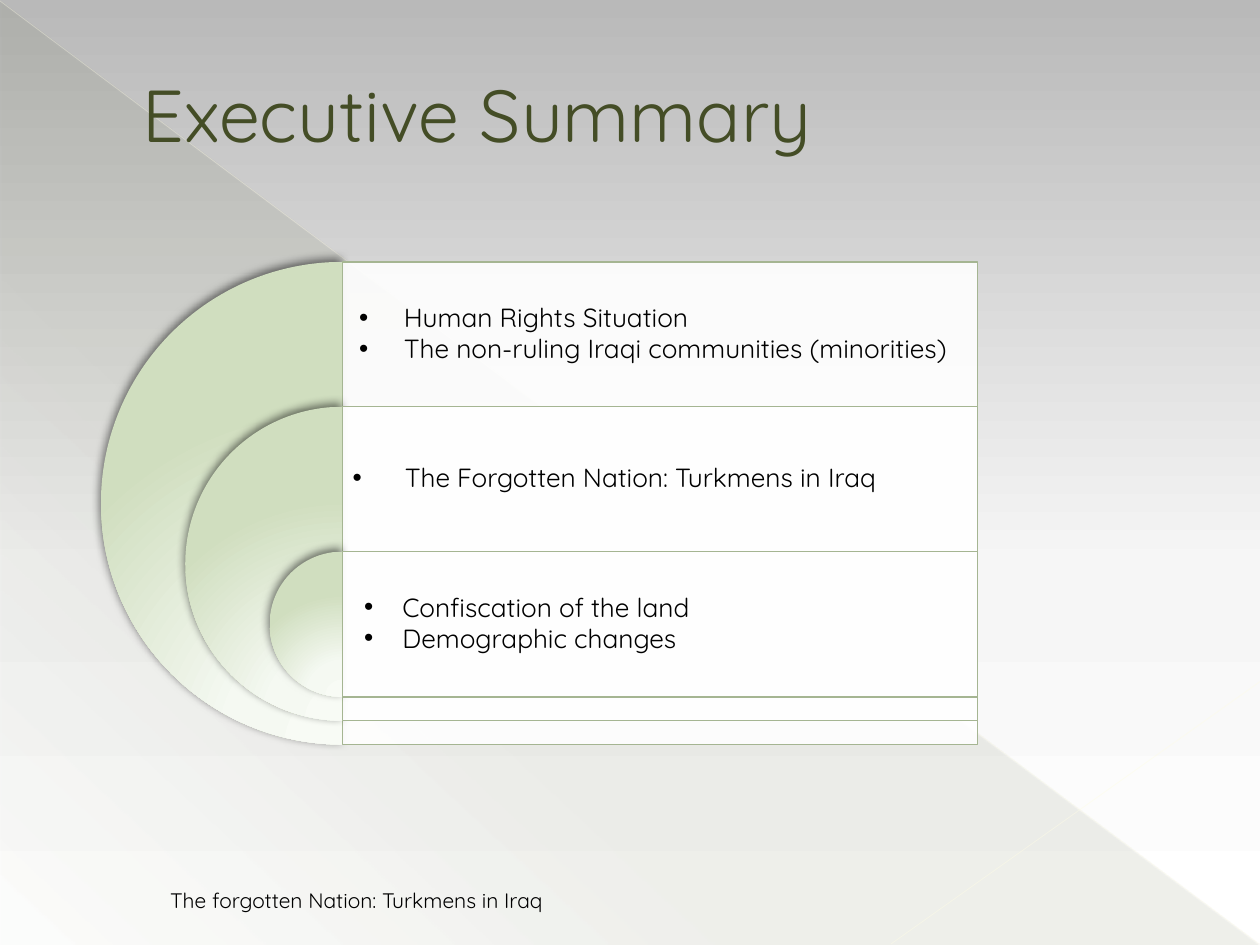
from dataclasses import dataclass

from lxml.etree import SubElement
from pptx import Presentation
from pptx.dml.color import RGBColor as Rgb
from pptx.enum.shapes import MSO_CONNECTOR as Connector, MSO_SHAPE as Preset
from pptx.enum.text import MSO_ANCHOR as Anchor, MSO_AUTO_SIZE as AutoSize, PP_ALIGN as Align
from pptx.oxml import parse_xml
from pptx.oxml.ns import nsdecls, qn
from pptx.util import Cm, Pt


@dataclass(frozen=True)
class Theme:
    font: str = "Quicksand"
    olive: str = "444D26"
    green: str = "A5B592"
    white: str = "FFFFFF"
    black: str = "000000"
    upper_line: str = "FFFDE3"
    lower_line: str = "FFFDE6"
    backdrop: tuple = ((0, "B9B9B9", 100), (60, "F6F6F6", 100), (100, "FFFFFF", 100))
    wedge: tuple = ((0, "444D26", 10), (70, "444D26", 8), (100, "444D26", 1))
    glow: tuple = ((0, "F8FBF5", 100), (34, "F5F9F2", 100), (100, "D0DEBF", 100))
    title_size: int = 42
    list_size: int = 15
    footer_size: int = 12


theme = Theme()


def apply_gradient(parent, stops, direction):
    marks = "".join(
        f'<a:gs pos="{pos * 1000}"><a:srgbClr val="{color}">'
        f'<a:alpha val="{alpha * 1000}"/></a:srgbClr></a:gs>'
        for pos, color, alpha in stops
    )
    gradient = parse_xml(
        f'<a:gradFill {nsdecls("a")} rotWithShape="1"><a:gsLst>{marks}</a:gsLst>{direction}</a:gradFill>'
    )
    parent.replace(parent.find(qn("a:solidFill")), gradient)


def set_opacity(parent, percent):
    color = next(parent.iter(qn("a:srgbClr")))
    SubElement(color, qn("a:alpha"), val=str(percent * 1000))


deck = Presentation()
deck.slide_width, deck.slide_height = Cm(25.4), Cm(19.05)
slide = deck.slides.add_slide(deck.slide_layouts.get_by_name("Comparison"))
shapes = slide.shapes
layers = shapes.element

slide.background.fill.solid()
apply_gradient(
    slide.element.find(".//" + qn("p:bgPr")), theme.backdrop, '<a:lin ang="5400000" scaled="0"/>'
)

wedge = shapes.add_shape(Preset.RIGHT_TRIANGLE, Cm(0.02), Cm(0.04), Cm(25.36), Cm(19))
wedge.shadow.inherit = False
wedge.fill.solid()
wedge.line.fill.background()
apply_gradient(wedge.element.spPr, theme.wedge, '<a:lin ang="7980000" scaled="0"/>')

diagonals = (
    ((0, 0.02, 25.38, 19.03), theme.upper_line, 0.39, 35),
    ((25.4, 13.74, 17.96, 19.03), theme.lower_line, 0.47, 45),
)
for ends, color, weight, opacity in diagonals:
    diagonal = shapes.add_connector(Connector.STRAIGHT, *(Cm(end) for end in ends))
    diagonal.line.color.rgb = Rgb.from_string(color)
    diagonal.line.width = Pt(weight)
    set_opacity(diagonal.element.spPr, opacity)
    SubElement(diagonal.element.spPr, qn("a:effectLst"))

axis, stack_top, row_height = 6.9, 5.28, 2.92
panel_width = 12.8
outer_diameter, diameter_step = 9.73, 3.4
for level in range(3):
    diameter = outer_diameter - level * diameter_step
    top = Cm(stack_top + level * row_height)

    arc = shapes.add_shape(Preset.PIE, Cm(axis - diameter / 2), top, Cm(diameter), Cm(diameter))
    arc.adjustments[0], arc.adjustments[1] = 54, 162
    arc.fill.solid()
    arc.line.fill.background()
    apply_gradient(
        arc.element.spPr,
        theme.glow,
        '<a:path path="circle"><a:fillToRect l="50000" t="155000" r="50000" b="-55000"/></a:path>',
    )
    arc.shadow.inherit = False
    shade = SubElement(
        arc.element.spPr.find(qn("a:effectLst")), qn("a:outerShdw"),
        blurRad=str(Pt(5)), dist=str(Pt(2)), dir=str(245 * 60000), rotWithShape="0",
    )
    SubElement(shade, qn("a:srgbClr"), val=theme.black)
    set_opacity(shade, 50)

    panel = shapes.add_shape(Preset.RECTANGLE, Cm(axis), top, Cm(panel_width), Cm(diameter))
    panel.shadow.inherit = False
    panel.fill.solid()
    panel.fill.fore_color.rgb = Rgb.from_string(theme.white)
    set_opacity(panel.element.spPr, 90)
    panel.line.color.rgb = Rgb.from_string(theme.green)
    panel.line.width = Pt(0.75)

topics = (
    (7.09, 0.9, ("Human Rights Situation", "The non-ruling Iraqi communities (minorities)")),
    (6.96, 1.05, ("The Forgotten Nation: Turkmens in Iraq",)),
    (7.19, 0.77, ("Confiscation of the land", "Demographic changes")),
)
topic_holders = list(slide.placeholders)[1:]
for row, (left, indent, points) in enumerate(topics):
    topic = topic_holders[row]
    topic.left, topic.top = Cm(left), Cm(stack_top + row * row_height)
    topic.width, topic.height = Cm(axis + panel_width - left), Cm(row_height)
    frame = topic.text_frame
    frame.text = "\n".join(points)
    frame.word_wrap = True
    frame.auto_size = AutoSize.NONE
    frame.vertical_anchor = Anchor.MIDDLE
    frame.margin_left = frame.margin_right = frame.margin_top = frame.margin_bottom = Cm(0.15)
    for point in frame.paragraphs:
        point.line_spacing = 0.9
        point.space_before, point.space_after = Pt(0), Pt(1.5)
        properties = point._p.get_or_add_pPr()
        properties.set("marL", str(Cm(indent)))
        properties.set("indent", str(-Cm(indent)))
        SubElement(properties, qn("a:buChar"), char="•")
        point.font.name = theme.font
        point.font.size = Pt(theme.list_size)
        point.font.bold = False
        point.font.color.rgb = Rgb.from_string(theme.black)
    layers.append(topic.element)
layers.remove(topic_holders[-1].element)

title = shapes.title
title.left, title.top, title.width, title.height = Cm(1.27), Cm(0.74), Cm(22.86), Cm(3.07)
layers.append(title.element)
footer = shapes.add_textbox(Cm(1.27), Cm(17.68), Cm(11.84), Cm(0.84))

captions = (
    (title, "Executive Summary", theme.title_size, theme.olive, Align.LEFT, Anchor.MIDDLE),
    (footer, "The forgotten Nation: Turkmens in Iraq", theme.footer_size, theme.black,
     Align.CENTER, Anchor.BOTTOM),
)
for caption, wording, size, color, alignment, anchor in captions:
    frame = caption.text_frame
    frame.text = wording
    frame.word_wrap = True
    frame.auto_size = AutoSize.NONE
    frame.vertical_anchor = anchor
    line = frame.paragraphs[0]
    line.alignment = alignment
    line.font.name = theme.font
    line.font.size = Pt(size)
    line.font.color.rgb = Rgb.from_string(color)
title.text_frame.paragraphs[0]._p.get_or_add_pPr().set("marL", str(Cm(1.35)))

deck.save("out.pptx")
